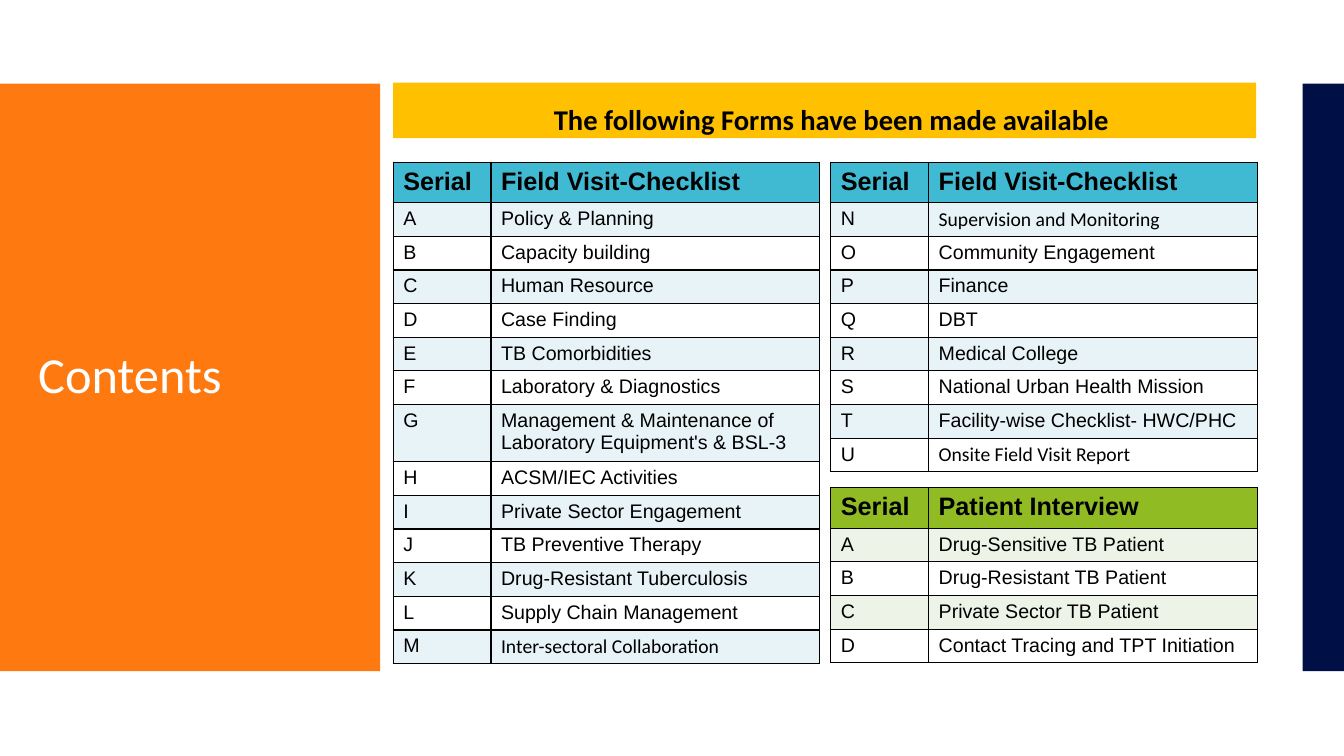
from dataclasses import dataclass

from lxml.etree import SubElement
from pptx import Presentation
from pptx.dml.color import RGBColor as Rgb
from pptx.enum.shapes import MSO_SHAPE as Shape
from pptx.enum.text import MSO_ANCHOR as Anchor, PP_ALIGN as Align
from pptx.oxml.ns import qn
from pptx.util import Pt

PX = 9144  # EMU in one px, 100 px to the inch


@dataclass(frozen=True)
class Theme:
    orange: str = "FE7A10"
    navy: str = "000F46"
    amber: str = "FFC000"
    teal: str = "40BAD2"
    pale_teal: str = "E8F3F7"
    green: str = "90BB23"
    pale_green: str = "EEF3E7"
    white: str = "FFFFFF"
    black: str = "000000"
    title_size: float = 36
    banner_size: float = 20.4
    header_size: float = 18
    body_size: float = 14
    sans: str = "Arial"
    human: str = "Calibri"


THEME = Theme()

# Table wording
FIRST_FORMS = [
    "Policy & Planning", "Capacity building", "Human Resource", "Case Finding",
    "TB Comorbidities", "Laboratory & Diagnostics",
    "Management & Maintenance of Laboratory Equipment's & BSL-3",
    "ACSM/IEC Activities", "Private Sector Engagement", "TB Preventive Therapy",
    "Drug-Resistant Tuberculosis", "Supply Chain Management",
    "Inter-sectoral Collaboration",
]
SECOND_FORMS = [
    "Supervision and Monitoring", "Community Engagement", "Finance", "DBT",
    "Medical College", "National Urban Health Mission",
    "Facility-wise Checklist- HWC/PHC", "Onsite Field Visit Report",
]
INTERVIEWS = [
    "Drug-Sensitive TB Patient", "Drug-Resistant TB Patient",
    "Private Sector TB Patient", "Contact Tracing and TPT Initiation",
]
CALIBRI_FORMS = {FIRST_FORMS[-1], SECOND_FORMS[0], SECOND_FORMS[-1]}

COLUMN_WIDTHS = (97, 326)
HEADER_HEIGHT, ROW_HEIGHT = 37, 32


def px(*lengths):
    return [length * PX for length in lengths]


def apply(target, formats):
    for name, value in formats.items():
        setattr(target, name, value)


def paint(fill, color):
    fill.solid()
    fill.fore_color.rgb = Rgb.from_string(color)


def write(para, text, size, color, font, bold=False):
    span = para.add_run()
    span.text = text
    apply(span.font, {"size": Pt(size), "name": font, "bold": bold})
    span.font.color.rgb = Rgb.from_string(color)


def add_panel(page, area, color):
    panel = page.shapes.add_shape(Shape.RECTANGLE, *px(*area))
    panel.shadow.inherit = False
    paint(panel.fill, color)
    panel.line.fill.background()
    return panel


def format_box(box, **para_formats):
    apply(box.text_frame, {"word_wrap": True, "vertical_anchor": Anchor.MIDDLE})
    para = box.text_frame.paragraphs[0]
    apply(para, para_formats)
    return para


def add_title(page, text):
    box = page.shapes.add_textbox(*px(28, 123, 322, 503))
    para = format_box(box, line_spacing=0.9)
    write(para, text, THEME.title_size, THEME.white, THEME.human)


def add_banner(page, text):
    box = add_panel(page, (390, 82, 856, 55), THEME.amber)
    para = format_box(box, alignment=Align.CENTER, line_spacing=1.5)
    para._p.get_or_add_pPr().set("marL", str(13 * PX))
    write(para, text, THEME.banner_size, THEME.black, THEME.human, bold=True)


def add_borders(cell):
    properties = cell._tc.get_or_add_tcPr()
    for side in ("a:lnL", "a:lnR", "a:lnT", "a:lnB"):
        line = SubElement(properties, qn(side), w=str(Pt(1)))
        fill = SubElement(line, qn("a:solidFill"))
        SubElement(fill, qn("a:srgbClr"), val=THEME.black)


def fill_cell(cell, text, color, size, font, bold):
    add_borders(cell)
    paint(cell.fill, color)
    write(cell.text_frame.paragraphs[0], text, size, THEME.black, font, bold)


def add_form_table(page, left, top, heading, forms, first_serial, colors):
    header_color, band_color = colors
    height = HEADER_HEIGHT + ROW_HEIGHT * len(forms)
    frame = page.shapes.add_table(len(forms) + 1, len(COLUMN_WIDTHS),
                                  *px(left, top, sum(COLUMN_WIDTHS), height))
    table = frame.table
    for column, width in zip(table.columns, COLUMN_WIDTHS):
        column.width = width * PX

    # Header row
    table.rows[0].height = HEADER_HEIGHT * PX
    for cell, text in zip(table.rows[0].cells, ("Serial", heading)):
        fill_cell(cell, text, header_color, THEME.header_size, THEME.sans, True)

    # Lettered rows in alternating bands; wrapped text makes a row taller
    for index, form in enumerate(forms):
        row = table.rows[index + 1]
        row.height = ROW_HEIGHT * PX
        color = THEME.white if index % 2 else band_color
        serial = chr(ord(first_serial) + index)
        for cell, text in zip(row.cells, (serial, form)):
            font = THEME.human if text in CALIBRI_FORMS else THEME.sans
            fill_cell(cell, text, color, THEME.body_size, font, False)


def main():
    deck = Presentation()
    apply(deck, {"slide_width": 1333 * PX, "slide_height": 750 * PX})
    page = deck.slides.add_slide(deck.slide_layouts[6])

    # Side panels, title and banner
    add_panel(page, (0, 83, 377, 583), THEME.orange)
    add_panel(page, (1292, 83, 41, 583), THEME.navy)
    add_title(page, "Contents")
    add_banner(page, "The following Forms have been made available")

    # Form tables
    checklist = "Field Visit-Checklist"
    teal = (THEME.teal, THEME.pale_teal)
    green = (THEME.green, THEME.pale_green)
    add_form_table(page, 390, 161, checklist, FIRST_FORMS, "A", teal)
    add_form_table(page, 824, 161, checklist, SECOND_FORMS, "N", teal)
    add_form_table(page, 824, 484, "Patient Interview", INTERVIEWS, "A", green)

    deck.save("out.pptx")


if __name__ == "__main__":
    main()
